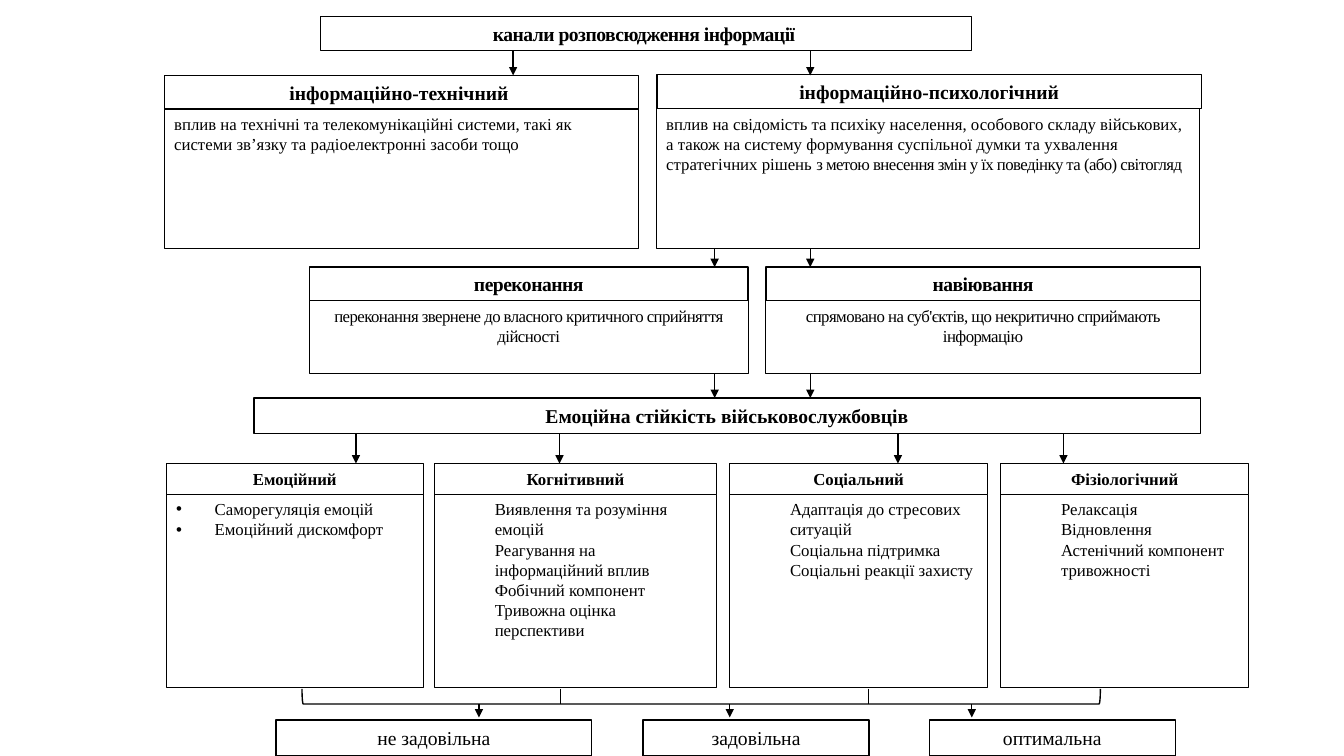
from lxml import etree
from pptx import Presentation
from pptx.dml.color import RGBColor
from pptx.enum.shapes import MSO_CONNECTOR, MSO_SHAPE
from pptx.enum.text import MSO_ANCHOR, PP_ALIGN
from pptx.oxml.ns import qn
from pptx.util import Cm, Pt

RECT, BRACKET = MSO_SHAPE.RECTANGLE, MSO_SHAPE.RIGHT_BRACKET
STRAIGHT = MSO_CONNECTOR.STRAIGHT
TOP, MIDDLE = MSO_ANCHOR.TOP, MSO_ANCHOR.MIDDLE
LEFT, CENTER = PP_ALIGN.LEFT, PP_ALIGN.CENTER
COLORS = {"ink": "000000", "paper": "FFFFFF"}
FONT = "Times New Roman"
TIGHT = -40
PLAIN_INDENT = (1.27, 0)
BULLET_INDENT = (0.97, -0.97)


def rgb(name):
    return RGBColor.from_string(COLORS[name])


def add_run(p, text, size, bold=False, spacing=0):
    r = p.add_run()
    r.text = text
    r.font.name = FONT
    r.font.size = Pt(size)
    r.font.bold = bold
    r.font.color.rgb = rgb("ink")
    if spacing:
        r._r.get_or_add_rPr().set("spc", str(spacing))


def indent(p, margin, first, bullet):
    pPr = p._p.get_or_add_pPr()
    pPr.set("marL", str(Cm(margin)))
    pPr.set("indent", str(Cm(first)))
    if bullet:
        etree.SubElement(pPr, qn("a:buFont")).set("typeface", "Arial")
        etree.SubElement(pPr, qn("a:buChar")).set("char", "•")


def add_box(slide, left, top, width, height, line, anchor):
    sp = slide.shapes.add_shape(RECT, Cm(left), Cm(top), Cm(width), Cm(height))
    sp.shadow.inherit = False
    sp.fill.solid()
    sp.fill.fore_color.rgb = rgb("paper")
    sp.line.color.rgb = rgb("ink")
    sp.line.width = Pt(line)
    tf = sp.text_frame
    tf.word_wrap = True
    tf.vertical_anchor = anchor
    return tf


def add_title(slide, left, top, width, height, text, size=14, bold=True,
              spacing=0, line=1):
    tf = add_box(slide, left, top, width, height, line, MIDDLE)
    p = tf.paragraphs[0]
    p.alignment = CENTER
    add_run(p, text, size, bold, spacing)


def add_body(slide, left, top, width, height, runs, align):
    tf = add_box(slide, left, top, width, height, 0.5, TOP)
    p = tf.paragraphs[0]
    p.alignment = align
    for text, spacing in runs:
        add_run(p, text, 12, spacing=spacing)


def add_list(slide, left, top, width, height, items, bullet):
    tf = add_box(slide, left, top, width, height, 0.5, TOP)
    for i, item in enumerate(items):
        p = tf.add_paragraph() if i else tf.paragraphs[0]
        p.alignment = LEFT
        indent(p, *(BULLET_INDENT if bullet else PLAIN_INDENT), bullet)
        add_run(p, item, 12)


def add_vertical(slide, x, top, bottom, arrow=True):
    cxn = slide.shapes.add_connector(STRAIGHT, Cm(x), Cm(top), Cm(x), Cm(bottom))
    cxn.line.color.rgb = rgb("ink")
    cxn.line.width = Pt(1)
    if arrow:
        etree.SubElement(cxn.line._get_or_add_ln(), qn("a:tailEnd")).set("type", "triangle")
    etree.SubElement(cxn._element.spPr, qn("a:effectLst"))


def add_bracket(slide):
    sp = slide.shapes.add_shape(BRACKET, Cm(17.48), Cm(7.49), Cm(0.38), Cm(20.12))
    sp.rotation = 90
    sp.shadow.inherit = False
    sp.fill.background()
    sp.line.color.rgb = rgb("ink")
    sp.line.width = Pt(1)


def add_channels(slide):
    add_title(slide, 8.08, 0.41, 16.41, 0.86, "канали розповсюдження інформації ",
              spacing=TIGHT)
    add_body(slide, 4.14, 2.74, 11.96, 3.51, [
        ("вплив на технічні та телекомунікаційні системи, такі як системи "
         "зв’язку та радіоелектронні засоби тощо", 0)], LEFT)
    add_title(slide, 4.14, 1.91, 11.96, 0.84, "інформаційно-технічний ")
    add_body(slide, 16.54, 2.74, 13.69, 3.51, [
        ("вплив на свідомість та психіку населення, особового складу "
         "військових, а також на систему формування суспільної думки та "
         "ухвалення стратегічних рішень ", 0),
        ("з метою внесення змін у їх поведінку та (або) світогляд", TIGHT)], LEFT)
    add_title(slide, 16.56, 1.88, 13.72, 0.86, "інформаційно-психологічний")


def add_methods(slide):
    methods = [
        (7.8, 11.05, "переконання",
         "переконання звернене до власного критичного сприйняття дійсності"),
        (19.3, 10.95, "навіювання",
         "спрямовано на суб'єктів, що некритично сприймають інформацію"),
    ]
    for left, width, title, text in methods:
        add_body(slide, left, 7.57, width, 1.83, [(text, TIGHT)], CENTER)
        add_title(slide, left, 6.73, width, 0.84, title, spacing=TIGHT)


def add_components(slide):
    add_title(slide, 6.4, 10.03, 23.85, 0.89, "Емоційна стійкість військовослужбовців")
    components = [
        (4.19, 6.48, "Емоційний", True,
         ["Саморегуляція емоцій", "Емоційний дискомфорт"]),
        (10.95, 7.11, "Когнітивний", False,
         ["Виявлення та розуміння емоцій", "Реагування на інформаційний вплив",
          "Фобічний компонент", "Тривожна оцінка перспективи"]),
        (18.39, 6.5, "Соціальний", False,
         ["Адаптація до стресових ситуацій", "Соціальна підтримка",
          "Соціальні реакції захисту"]),
        (25.22, 6.25, "Фізіологічний", False,
         ["Релаксація", "Відновлення", "Астенічний компонент тривожності"]),
    ]
    for left, width, title, bullet, items in components:
        add_title(slide, left, 11.68, width, 0.79, title, size=12, line=0.5)
        add_list(slide, left, 12.45, width, 4.88, items, bullet)


def add_levels(slide):
    levels = [(6.96, 7.95, "не задовільна"), (16.21, 5.69, "задовільна"),
              (23.42, 6.2, "оптимальна")]
    for left, width, text in levels:
        add_title(slide, left, 18.14, width, 0.91, text, bold=False)


def add_links(slide):
    arrows = [
        ([12.93, 20.42], 1.27, 1.9),
        ([18.01, 20.42], 6.25, 6.73),
        ([18.01, 20.42], 9.4, 10.03),
        ([8.97, 14.1, 22.63, 26.8], 10.92, 11.68),
        ([12.07, 18.39, 24.49], 17.75, 18.08),
    ]
    for xs, top, bottom in arrows:
        for x in xs:
            add_vertical(slide, x, top, bottom)
    for x in (14.12, 21.89):
        add_vertical(slide, x, 17.35, 17.73, arrow=False)


def main():
    prs = Presentation()
    prs.slide_width, prs.slide_height = Cm(33.87), Cm(19.05)
    slide = prs.slides.add_slide(prs.slide_layouts[6])
    add_channels(slide)
    add_methods(slide)
    add_components(slide)
    add_levels(slide)
    add_bracket(slide)
    add_links(slide)
    prs.save("out.pptx")


if __name__ == "__main__":
    main()
